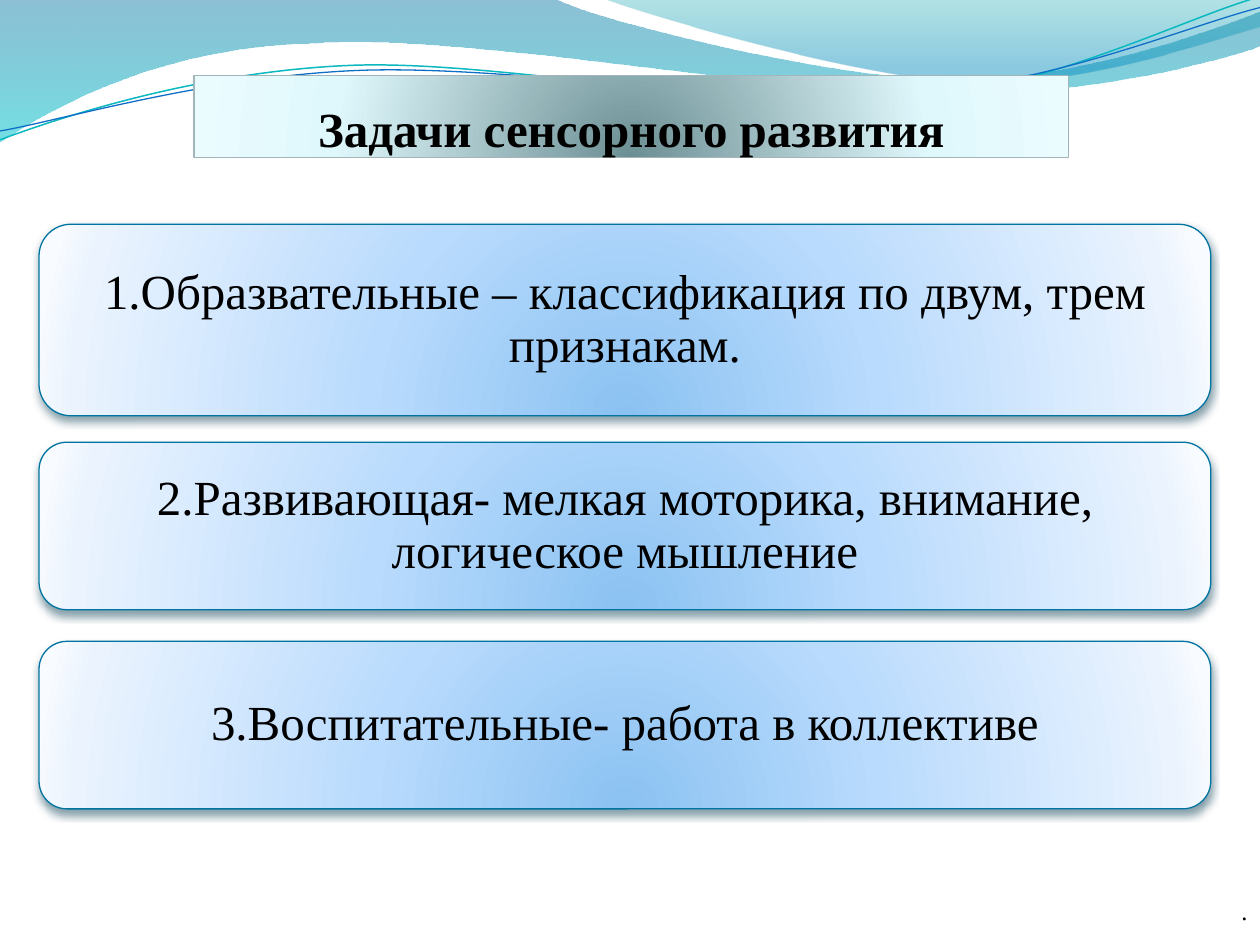
from dataclasses import dataclass

from lxml import etree
from pptx import Presentation
from pptx.dml.color import RGBColor
from pptx.enum import shapes, text
from pptx.oxml import ns
from pptx.util import Inches, Pt


@dataclass(frozen=True)
class Theme:
    font: str = "Times New Roman"
    big: int = 28
    small: int = 14
    ink: str = "000000"
    teal: str = "0AB8BF"
    blue: str = "0F6FC6"
    edge: str = "0074A1"
    shade: str = "00374C"
    rim: str = "A2B5B9"
    # Gradient stops: position %, colour, opacity %
    sea: tuple = ((0, "0074A1", 45), (100, "00C6CF", 55))
    foam: tuple = ((0, "00A1A9", 30), (80, "008BBF", 45))
    band: tuple = ((0, "6C8F94", 100), (68, "DFF8FC", 100), (100, "EBFCFF", 100))
    card: tuple = ((0, "8BC2F1", 100), (43, "B9DBFD", 100),
                   (93, "EAF3FE", 100), (100, "F8FBFF", 100))


T = Theme()

# A pair is a straight step; six numbers are a Bezier step
SWELL = [(0, 0), (4.4, -0.01), (4.76, 0.17, 6.64, 0.63, 7.58, 0.63),
         (8.53, 0.63, 9.58, 0.26, 10, 0.09), (10.01, 0.36),
         (9.83, 0.44, 8.7, 0.76, 7.46, 0.75),
         (6.22, 0.75, 3.82, 0.28, 2.57, 0.34),
         (1.29, 0.36, 0.46, 0.83, -0.01, 1.13)]
CREST = [(4.79, -0.01), (5.09, 0.11, 6.82, 0.62, 7.69, 0.65),
         (8.56, 0.69, 9.61, 0.32, 10, 0.21), (10, 0)]
UPPER = [(0, 1.11), (0.48, 0.93, 1.58, 0.57, 2.77, 0.52),
         (3.95, 0.47, 5.93, 0.89, 7.13, 0.8),
         (8.33, 0.71, 9.38, 0.15, 9.98, -0.02)]
LOWER = [(0, 1.04), (0.47, 0.96, 1.64, 0.61, 2.83, 0.56),
         (4.03, 0.51, 5.97, 0.84, 7.17, 0.75),
         (8.36, 0.67, 9.41, 0.21, 10, 0.06)]

# Top, height and wording of each task
TASKS = [
    (1.78, 1.52, "1.Образвательные – классификация по двум, трем признакам."),
    (3.51, 1.33, "2.Развивающая- мелкая моторика, внимание, логическое мышление"),
    (5.09, 1.33, "3.Воспитательные- работа в коллективе"),
]


def node(root, tag, **attrs):
    return etree.SubElement(root, ns.qn("a:" + tag),
                            {key: str(val) for key, val in attrs.items()})


def tint(root, color, alpha):
    node(node(root, "srgbClr", val=color), "alpha", val=alpha * 1000)


def blend(shape, stops, glow=False):
    """Gradient fill: a glow from below, or top to bottom."""
    shape.fill.solid()
    old = shape._element.spPr.find(ns.qn("a:solidFill"))
    grad = etree.Element(ns.qn("a:gradFill"), rotWithShape="1")
    row = node(grad, "gsLst")
    for pos, color, alpha in stops:
        tint(node(row, "gs", pos=pos * 1000), color, alpha)
    if glow:
        node(node(grad, "path", path="circle"), "fillToRect",
             l=50000, t=130000, r=50000, b=-30000)
    else:
        node(grad, "lin", ang=5400000, scaled=1)
    old.getparent().replace(old, grad)


def stroke(shape, color, width):
    shape.line.color.rgb = RGBColor.from_string(color)
    shape.line.width = Pt(width)


def shadow(shape, color):
    shape.shadow.inherit = False
    root = shape._element.spPr.find(ns.qn("a:effectLst"))
    tint(node(root, "outerShdw", blurRad=Pt(4.5), dist=Pt(3),
              dir=5400000, rotWithShape=0), color, 48)


def write(shape, words, size, align, bold=False):
    frame = shape.text_frame
    frame.word_wrap = True
    frame.text = words
    para = frame.paragraphs[0]
    para.alignment = align
    font = para.font
    font.name, font.size, font.bold = T.font, Pt(size), bold
    font.color.rgb = RGBColor.from_string(T.ink)
    return frame


def curve(slide, steps, close):
    """Outline through the step ends, then bent where a step is a Bezier."""
    ends = [(Inches(step[-2]), Inches(step[-1])) for step in steps]
    pen = slide.shapes.build_freeform(*ends[0])
    pen.add_line_segments(ends[1:], close=close)
    shape = pen.convert_to_shape()
    shape.shadow.inherit = False
    sides = list(shape._element.iter(ns.qn("a:lnTo")))
    for side, step in zip(sides, steps[1:]):
        if len(step) == 6:
            bend = etree.Element(ns.qn("a:cubicBezTo"))
            for x, y in zip(step[::2], step[1::2]):
                node(bend, "pt", x=Inches(x) - shape.left, y=Inches(y) - shape.top)
            side.getparent().replace(side, bend)
    return shape


def wave(slide, steps, stops):
    shape = curve(slide, steps, True)
    blend(shape, stops)
    shape.line.fill.background()


def thread(slide, steps, color, width):
    shape = curve(slide, steps, False)
    shape.fill.background()
    stroke(shape, color, width)


def head(slide, words):
    shape = slide.shapes.title
    shape.left, shape.top = Inches(1.54), Inches(0.6)
    shape.width, shape.height = Inches(6.94), Inches(0.65)
    blend(shape, T.band, glow=True)
    stroke(shape, T.rim, 0.75)
    frame = write(shape, words, T.big, text.PP_ALIGN.CENTER, bold=True)
    frame.auto_size = text.MSO_AUTO_SIZE.NONE
    frame.vertical_anchor = text.MSO_ANCHOR.BOTTOM
    frame.margin_left = frame.margin_right = frame.margin_bottom = 0
    # Lift the title above the waves
    slide.shapes._spTree.append(shape._element)


def card(slide, top, high, words):
    shape = slide.shapes.add_shape(shapes.MSO_SHAPE.ROUNDED_RECTANGLE, Inches(0.31),
                                   Inches(top), Inches(9.3), Inches(high))
    blend(shape, T.card, glow=True)
    stroke(shape, T.edge, 0.75)
    shadow(shape, T.shade)
    frame = write(shape, words, T.big, text.PP_ALIGN.CENTER)
    frame.vertical_anchor = text.MSO_ANCHOR.MIDDLE
    frame.margin_left = frame.margin_right = Inches(0.12)
    frame.margin_top = frame.margin_bottom = Inches(0.12)
    frame.paragraphs[0].line_spacing = 0.9


def main():
    deck = Presentation()
    deck.slide_width, deck.slide_height = Inches(10), Inches(7.5)
    slide = deck.slides.add_slide(deck.slide_layouts[5])

    # Waves along the top
    wave(slide, SWELL, T.sea)
    wave(slide, CREST, T.foam)
    thread(slide, UPPER, T.teal, 0.85)
    thread(slide, LOWER, T.blue, 0.75)

    # Title and tasks
    head(slide, "Задачи сенсорного развития")
    for task in TASKS:
        card(slide, *task)

    # Corner mark
    mark = slide.shapes.add_textbox(Inches(6.95), Inches(7.06),
                                    Inches(3.05), Inches(0.57))
    write(mark, ".", T.small, text.PP_ALIGN.RIGHT)

    deck.save("out.pptx")


if __name__ == "__main__":
    main()
